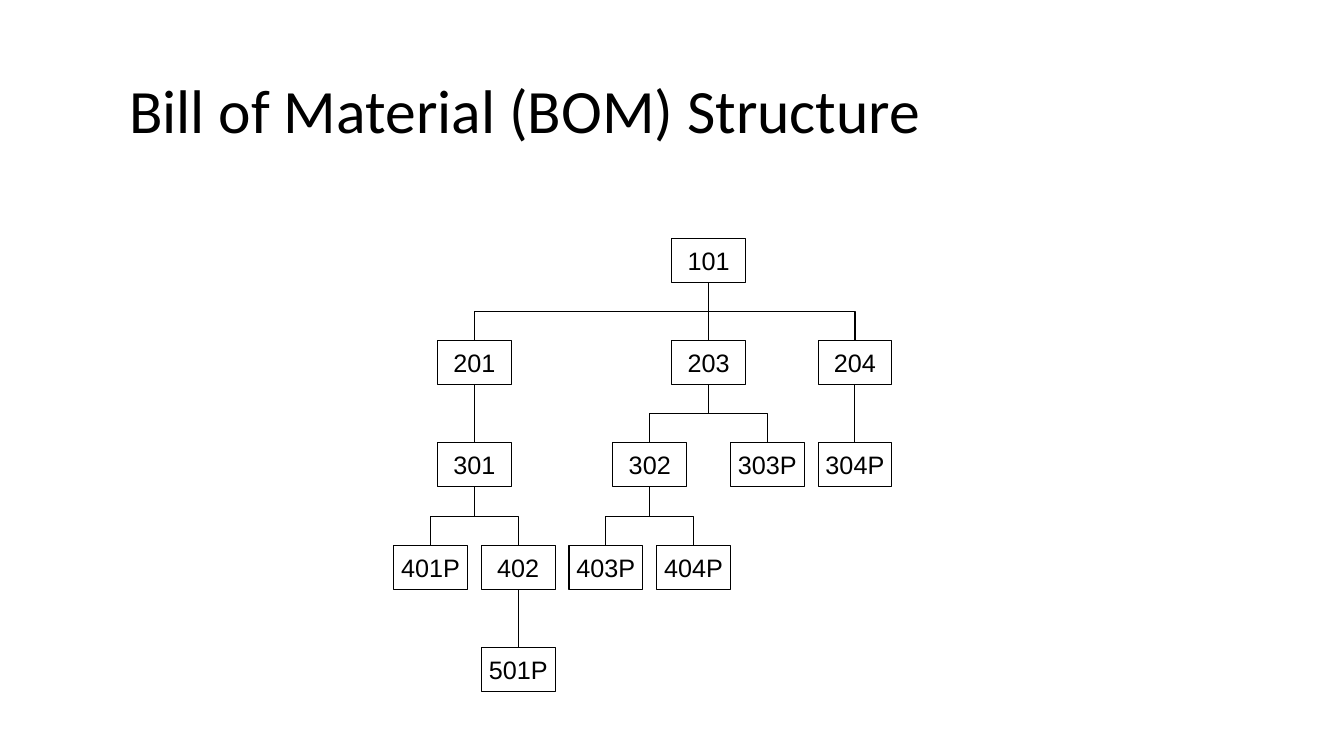
from dataclasses import dataclass

from pptx import Presentation
from pptx.dml.color import RGBColor
from pptx.enum.shapes import MSO_CONNECTOR, MSO_SHAPE
from pptx.enum.text import MSO_ANCHOR, PP_ALIGN
from pptx.oxml.ns import qn
from pptx.util import Cm, Pt
from lxml.etree import SubElement


@dataclass(frozen=True)
class Theme:
    ink: RGBColor = RGBColor(0, 0, 0)
    title_font: str = "Calibri"
    part_font: str = "Arial"
    title_size: int = 44
    part_size: int = 18
    line_width: float = 0.75


THEME = Theme()
TOP, BOTTOM = 0, 2

PART_WIDTH, PART_HEIGHT = 1.86, 1.11
COLUMN_PITCH, LEVEL_PITCH = 2.21, 2.58

BOM = {"101": {
    "201": {"301": {"401P": {}, "402": {"501P": {}}}},
    "203": {"302": {"403P": {}, "404P": {}}, "303P": {}},
    "204": {"304P": {}},
}}
LEAF_COLUMNS = {"401P": 0, "501P": 1, "403P": 2, "404P": 3,
                "303P": 3.84, "304P": 4.84}


def write_text(shape, text, *, font, size, align, wrap=True, spacing=None):
    frame = shape.text_frame
    frame.text = text
    frame.word_wrap = wrap
    frame.vertical_anchor = MSO_ANCHOR.MIDDLE
    paragraph = frame.paragraphs[0]
    paragraph.alignment = align
    if spacing:
        paragraph.line_spacing = spacing
    run_font = paragraph.runs[0].font
    run_font.name, run_font.size = font, Pt(size)
    run_font.color.rgb = THEME.ink


def outline(shape):
    shape.line.color.rgb = THEME.ink
    shape.line.width = Pt(THEME.line_width)


def add_title(slide, left, top, width, height):
    title = slide.shapes.title
    title.left, title.top = Cm(left), Cm(top)
    title.width, title.height = Cm(width), Cm(height)
    write_text(title, "Bill of Material (BOM) Structure", font=THEME.title_font,
               size=THEME.title_size, align=PP_ALIGN.LEFT, spacing=0.9)


def add_part(slide, number, left, top):
    part = slide.shapes.add_shape(MSO_SHAPE.RECTANGLE, Cm(left), Cm(top),
                                  Cm(PART_WIDTH), Cm(PART_HEIGHT))
    part.shadow.inherit = False
    part.fill.background()
    outline(part)
    write_text(part, number, font=THEME.part_font, size=THEME.part_size,
               align=PP_ALIGN.CENTER, wrap=False)
    return part


def link_parts(slide, parent, child):
    """Join parent bottom to child top, with a level bend halfway if needed."""
    start_x, start_y = parent.left + parent.width // 2, parent.top + parent.height
    end_x, end_y = child.left + child.width // 2, child.top
    across, down = end_x - start_x, end_y - start_y
    bent = abs(across) > Cm(0.05)
    kind = MSO_CONNECTOR.ELBOW if bent else MSO_CONNECTOR.STRAIGHT
    link = slide.shapes.add_connector(kind, start_x, start_y, end_x, end_y)
    link.begin_connect(parent, BOTTOM)
    link.end_connect(child, TOP)
    outline(link)
    properties = link._element.spPr
    SubElement(properties, qn("a:effectLst"))
    if bent:
        # An elbow leaves sideways, so a quarter turn makes it leave downwards.
        link.width, link.height = down, abs(across)
        link.left = (start_x + end_x - down) // 2
        link.top = (start_y + end_y - abs(across)) // 2
        transform = properties.find(qn("a:xfrm"))
        transform.set("rot", str((270 if across > 0 else 90) * 60000))
        transform.set("flipH", "1" if across > 0 else "0")
        transform.set("flipV", "0")


def column_of(number, components):
    """Return a leaf's own column, or the median column of the components."""
    if not components:
        return LEAF_COLUMNS[number]
    columns = sorted(column_of(*item) for item in components.items())
    middle = len(columns) // 2
    return (columns[middle] + columns[-middle - 1]) / 2


def add_assembly(slide, number, components, left, top, level=0):
    """Draw a part with all its components in the tree placed at left, top."""
    part = add_part(slide, number,
                    left + column_of(number, components) * COLUMN_PITCH,
                    top + level * LEVEL_PITCH)
    for component, subcomponents in components.items():
        child = add_assembly(slide, component, subcomponents, left, top, level + 1)
        link_parts(slide, part, child)
    return part


def main():
    deck = Presentation()
    deck.slide_width, deck.slide_height = Cm(33.87), Cm(19.05)
    slide = deck.slides.add_slide(deck.slide_layouts[5])
    add_title(slide, left=3, top=1.02, width=27.86, height=3.68)
    for number, components in BOM.items():
        add_assembly(slide, number, components, left=9.92, top=6)
    deck.save("out.pptx")


if __name__ == "__main__":
    main()
